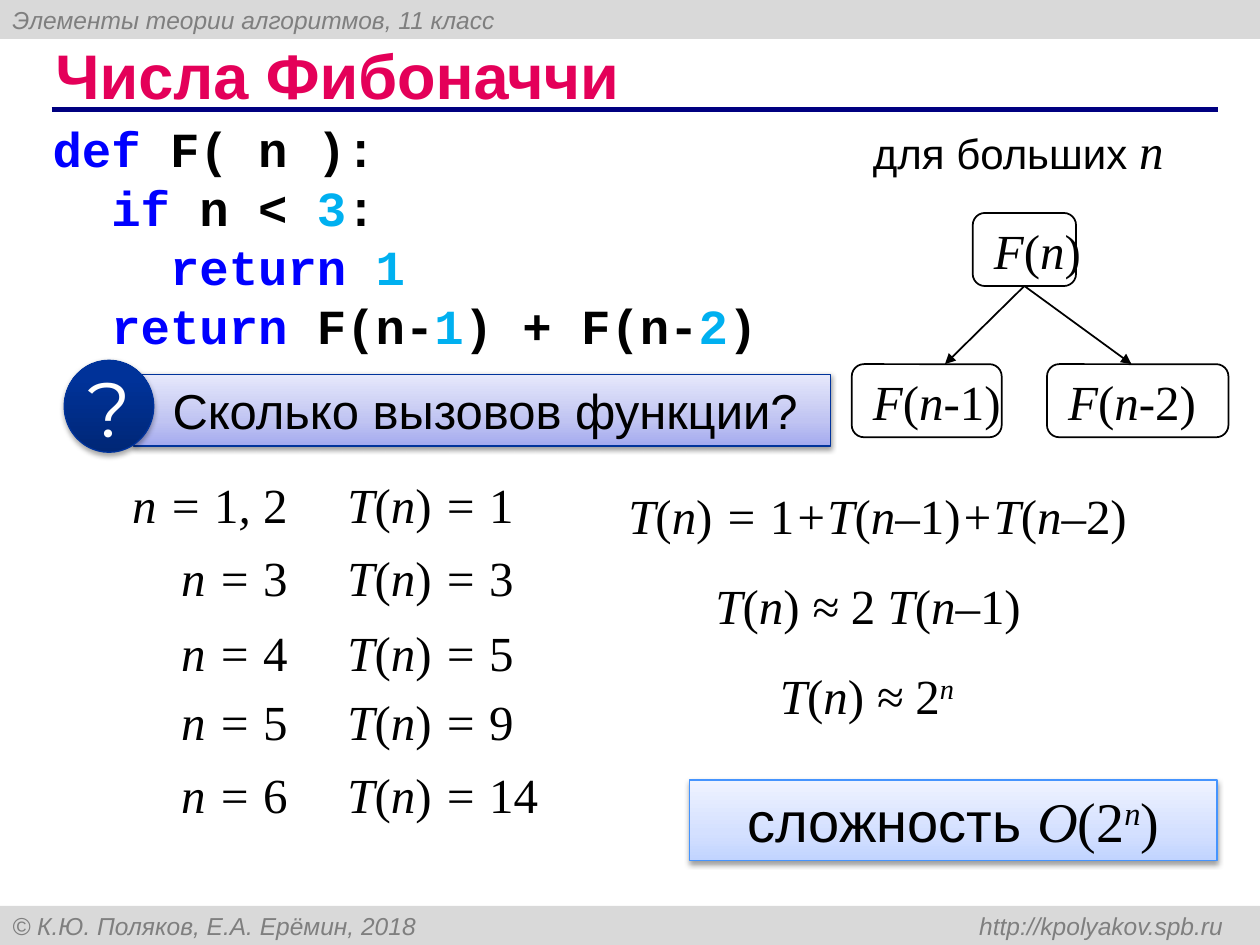
from lxml import etree
from pptx import Presentation
from pptx.dml.color import RGBColor
from pptx.enum.shapes import MSO_CONNECTOR as Connector, MSO_SHAPE as Preset
from pptx.enum.text import MSO_ANCHOR as Anchor, PP_ALIGN as Align
from pptx.oxml.ns import qn
from pptx.util import Inches, Pt

# Content; in formulas * switches italics and ^ starts a superscript
HEADER = "Элементы теории алгоритмов, 11 класс"
FOOTER = "© К.Ю. Поляков, Е.А. Ерёмин, 2018\thttp://kpolyakov.spb.ru"
TITLE = "Числа Фибоначчи"
CODE = [  # | separates the coloured parts
    "|def| F( n ):",
    "  |if| n < |3|:",
    "    |return| |1",
    "  |return| F(n-|1|) + F(n-|2|)",
]
KEYWORDS = ("def", "if", "return")
QUESTION = "Сколько вызовов функции?"
CALLS = [("1*, *2", 1, 3.72), ("3", 3, 4.3), ("4", 5, 4.89), ("5", 9, 5.44), ("6", 14, 6.02)]
FORMULAS = [
    ("*T*(*n*) *= *1*+T*(*n–*1)*+T*(*n–*2)", (4.73, 3.8, 4.47, 0.57)),
    ("*T*(*n*) *≈ *2 *T*(*n–*1)", (5.51, 4.52, 2.76, 0.57)),
    ("*T*(*n*) *≈ *2*^n*", (6.07, 5.23, 1.62, 0.57)),
]
ROOT = ("*F*(*n*)", (7.72, 1.69, 0.82, 0.58))
BRANCHES = [  # label, box, arrow tip
    ("*F*(*n-*1)", (6.76, 2.89, 1.19, 0.58), (7.5, 2.89)),
    ("*F*(*n-*2)", (8.31, 2.89, 1.44, 0.58), (8.98, 2.89)),
]

BLACK, GREY, BAR = "000000", "7F7F7F", "D9D9D9"
SERIF = {"name": "Times New Roman", "size": Pt(28)}
SANS = {"name": "Arial", "size": Pt(28)}
MONO = {"name": "Courier New", "size": Pt(28), "bold": True}


def rgb(value):
    return RGBColor.from_string(value)


def inches(values):
    return [Inches(value) for value in values]


def math_runs(formula, font=SERIF):
    """Turn formula markup into (text, font, colour, baseline) runs."""
    return [(part.lstrip("^"), {**font, "italic": index % 2 == 1}, BLACK,
             "30000" if part.startswith("^") else None)
            for index, part in enumerate(formula.split("*")) if part]


def code_runs(line):
    def colour(part):
        return "0000FF" if part in KEYWORDS else "00B0F0" if part.isdigit() else BLACK
    return [(part, MONO, colour(part), None) for part in line.split("|") if part]


def write(shape, lines, align=Align.LEFT, anchor=Anchor.MIDDLE, wrap=True, **frame_format):
    frame = shape.text_frame
    for name, value in {"vertical_anchor": anchor, "word_wrap": wrap, **frame_format}.items():
        setattr(frame, name, value)
    for index, runs in enumerate(lines):
        paragraph = frame.add_paragraph() if index else frame.paragraphs[0]
        paragraph.alignment = align
        for text, font, colour, baseline in runs:
            run = paragraph.add_run()
            run.text = text
            for name, value in font.items():
                setattr(run.font, name, value)
            run.font.color.rgb = rgb(colour)
            if baseline:
                run.font._element.set("baseline", baseline)


def add_text(box, lines, **text_format):
    write(slide.shapes.add_textbox(*inches(box)), lines, **text_format)


def add_box(preset, box, line=None, line_width=0.75, fill=None):
    shape = slide.shapes.add_shape(preset, *inches(box))
    shape.shadow.inherit = False
    if fill:
        shape.fill.solid()
        shape.fill.fore_color.rgb = rgb(fill)
    else:
        shape.fill.background()
    if line:
        shape.line.color.rgb = rgb(line)
        shape.line.width = Pt(line_width)
    else:
        shape.line.fill.background()
    return shape


def add_glossy_box(preset, box, line, stops, shadow_alpha=38):
    """Box with a vertical gradient and a soft shadow below."""
    shape = add_box(preset, box, line)
    properties = shape._element.spPr
    properties.remove(properties.find(qn("a:noFill")))
    gradient = etree.Element(qn("a:gradFill"), rotWithShape="1")
    stop_list = etree.SubElement(gradient, qn("a:gsLst"))
    for position, colour in stops:
        stop = etree.SubElement(stop_list, qn("a:gs"), pos=str(position * 1000))
        etree.SubElement(stop, qn("a:srgbClr"), val=colour)
    etree.SubElement(gradient, qn("a:lin"), ang="16200000", scaled="0")
    properties.find(qn("a:prstGeom")).addnext(gradient)
    shadow = etree.SubElement(properties.find(qn("a:effectLst")), qn("a:outerShdw"),
                              blurRad=str(Pt(3.1)), dist=str(Pt(1.6)), dir="5400000", rotWithShape="0")
    colour = etree.SubElement(shadow, qn("a:srgbClr"), val=BLACK)
    etree.SubElement(colour, qn("a:alpha"), val=str(shadow_alpha * 1000))
    return shape


def add_line(start, end, colour, width, arrow=False):
    line = slide.shapes.add_connector(Connector.STRAIGHT, *inches(start + end))
    line.line.color.rgb = rgb(colour)
    line.line.width = Pt(width)
    if arrow:
        etree.SubElement(line.line._get_or_add_ln(), qn("a:tailEnd"), type="triangle")
    etree.SubElement(line._element.spPr, qn("a:effectLst"))
    return line


presentation = Presentation()
presentation.slide_width, presentation.slide_height = inches((10, 7.5))
slide = presentation.slides.add_slide(presentation.slide_layouts[5])

# Header and footer bars, title and its rule
for text, top in ((HEADER, 0), (FOOTER, 7.19)):
    bar = add_box(Preset.RECTANGLE, (0, top, 10, 0.31), fill=BAR)
    write(bar, [[(text, {**SANS, "size": Pt(14), "italic": True}, GREY, None)]])
    tabs = etree.SubElement(bar.text_frame.paragraphs[0]._p.get_or_add_pPr(), qn("a:tabLst"))
    etree.SubElement(tabs, qn("a:tab"), pos=str(Inches(9.61)), algn="r")
title = slide.shapes.title
title.left, title.top, title.width, title.height = inches((0.34, 0.33, 9.16, 0.52))
write(title, [[(TITLE, {**SANS, "size": Pt(36), "bold": True}, "E40059", None)]])
add_line((0.41, 0.87), (9.67, 0.87), "000080", 3)

# Program
add_text((0.32, 0.88, 6.23, 1.99), [code_runs(line) for line in CODE])

# Question banner
banner = add_glossy_box(Preset.RECTANGLE, (1.06, 2.97, 5.53, 0.57), "00339B",
                        [(0, "A4AAEF"), (35, "C0C4F2"), (100, "E6E8FB")])
write(banner, [[(QUESTION, SANS, BLACK, None)]], margin_left=Inches(0.31), margin_right=0)
badge = add_glossy_box(Preset.OVAL, (0.51, 2.86, 0.71, 0.73), "00339B",
                       [(0, "002776"), (80, "003299"), (100, "00339A")], 35)
write(badge, [[("?", {"name": "Montserrat", "size": Pt(44)}, "FFFFFF", None)]],
      align=Align.CENTER, wrap=False)

# Number of calls for small n
for argument, count, top in CALLS:
    add_text((0.8, top, 1.58, 0.57), [math_runs(f"*n = *{argument}")],
             align=Align.RIGHT, anchor=Anchor.TOP)
    add_text((2.66, top, 1.8, 0.57), [math_runs(f"*T*(*n*)* = *{count}")], anchor=Anchor.TOP)

# Recurrence and its estimate
for formula, box in FORMULAS:
    add_text(box, [math_runs(formula)], align=Align.CENTER, wrap=False)

# Call tree for large n
add_text((6.83, 0.91, 2.53, 0.57),
         [[("для больших ", {**SANS, "size": Pt(24)}, BLACK, None)] + math_runs("*n*")],
         anchor=Anchor.TOP, wrap=False)
nodes = []
for label, box in [ROOT] + [branch[:2] for branch in BRANCHES]:
    node = add_box(Preset.ROUNDED_RECTANGLE, box, BLACK, 1)
    write(node, [math_runs(label)], wrap=False, margin_left=Inches(0.14), margin_right=0)
    nodes.append(node)
for label, box, tip in BRANCHES:
    add_line((8.13, 2.27), tip, BLACK, 1, arrow=True).begin_connect(nodes[0], 2)

# Conclusion
answer = add_glossy_box(Preset.RECTANGLE, (5.47, 6.19, 4.19, 0.64), "4594FE",
                        [(0, "C1D4FF"), (35, "D4E0FF"), (100, "EFF3FF")])
large = {"size": Pt(32)}
write(answer, [[("сложность ", {**SANS, **large}, BLACK, None)]
               + math_runs("*O*(2*^n*)", {**SERIF, **large})], align=Align.CENTER)

presentation.save("out.pptx")
